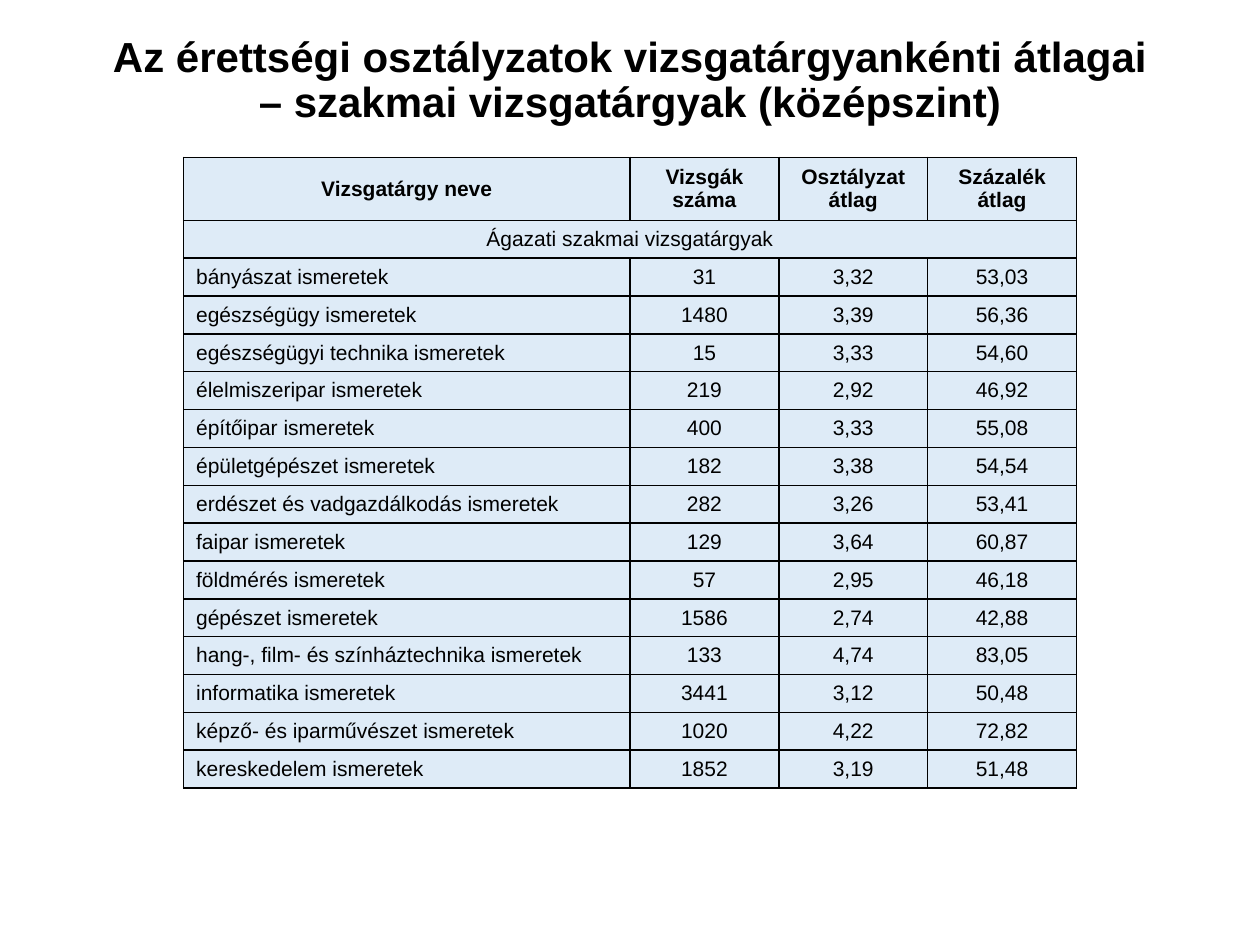
import pptx
import pptx.dml.color
import pptx.enum.text
import pptx.oxml
import pptx.oxml.ns
import pptx.util

Cm = pptx.util.Cm
Align = pptx.enum.text.PP_ALIGN
Anchor = pptx.enum.text.MSO_ANCHOR

TITLE = "Az érettségi osztályzatok vizsgatárgyankénti átlagai – szakmai vizsgatárgyak (középszint)"
HEADINGS = ("Vizsgatárgy neve", "Vizsgák száma", "Osztályzat átlag", "Százalék átlag")
SECTION = "Ágazati szakmai vizsgatárgyak"
SUBJECTS = (
    ("bányászat", "31", "3,32", "53,03"),
    ("egészségügy", "1480", "3,39", "56,36"),
    ("egészségügyi technika", "15", "3,33", "54,60"),
    ("élelmiszeripar", "219", "2,92", "46,92"),
    ("építőipar", "400", "3,33", "55,08"),
    ("épületgépészet", "182", "3,38", "54,54"),
    ("erdészet és vadgazdálkodás", "282", "3,26", "53,41"),
    ("faipar", "129", "3,64", "60,87"),
    ("földmérés", "57", "2,95", "46,18"),
    ("gépészet", "1586", "2,74", "42,88"),
    ("hang-, film- és színháztechnika", "133", "4,74", "83,05"),
    ("informatika", "3441", "3,12", "50,48"),
    ("képző- és iparművészet", "1020", "4,22", "72,82"),
    ("kereskedelem", "1852", "3,19", "51,48"),
)


def colour(hex_code):
    return pptx.dml.color.RGBColor.from_string(hex_code)


def write(frame, text, size=12, bold=False, align=Align.CENTER, spacing=None, ink="000000"):
    paragraph = frame.paragraphs[0]
    paragraph.alignment = align
    paragraph.line_spacing = spacing
    run = paragraph.add_run()
    run.text = text
    run.font.name = "Arial"
    run.font.size = pptx.util.Pt(size)
    run.font.bold = bold
    run.font.color.rgb = colour(ink)


class GradeSlide:
    """Holds the table style and the slide being built."""

    fill = "DEEBF7"
    border = "000000"
    border_width = pptx.util.Pt(1)

    def __init__(self, deck):
        self.slide = deck.slides.add_slide(deck.slide_layouts[6])

    def title(self, text, left, top, width, height):
        frame = self.slide.shapes.add_textbox(Cm(left), Cm(top), Cm(width), Cm(height)).text_frame
        frame.word_wrap = True
        frame.vertical_anchor = Anchor.MIDDLE
        write(frame, text, size=24, bold=True, spacing=0.9)

    def cell(self, cell, text="", **text_format):
        properties = cell._tc.get_or_add_tcPr()
        for side in "LRTB":
            properties.append(pptx.oxml.parse_xml(
                f'<a:ln{side} {pptx.oxml.ns.nsdecls("a")} w="{self.border_width}">'
                f'<a:solidFill><a:srgbClr val="{self.border}"/></a:solidFill></a:ln{side}>'))
        cell.fill.solid()
        cell.fill.fore_color.rgb = colour(self.fill)
        cell.vertical_anchor = Anchor.MIDDLE
        if text:
            write(cell.text_frame, text, **text_format)

    def grades(self, left, top, widths, header_height, row_height):
        rows = [HEADINGS, (SECTION, "", "", "")]
        rows += [(f"{subject} ismeretek", *values) for subject, *values in SUBJECTS]
        heights = [header_height] + [row_height] * (len(rows) - 1)
        table = self.slide.shapes.add_table(
            len(rows), len(widths), Cm(left), Cm(top), Cm(sum(widths)), Cm(sum(heights))).table
        table.horz_banding = False
        for column, width in zip(table.columns, widths):
            column.width = Cm(width)
        for row, height in zip(table.rows, heights):
            row.height = Cm(height)
        table.cell(1, 0).merge(table.cell(1, len(widths) - 1))
        for r, texts in enumerate(rows):
            for c, text in enumerate(texts):
                align = Align.LEFT if r > 1 and c == 0 else Align.CENTER
                self.cell(table.cell(r, c), text, bold=r == 0, align=align)


def main():
    deck = pptx.Presentation()
    deck.slide_width, deck.slide_height = Cm(25.4), Cm(19.05)
    slide = GradeSlide(deck)
    slide.title(TITLE, 1.75, -0.2, 21.9, 3.68)
    slide.grades(3.7, 3.17, (9, 3, 3, 3), header_height=1.04, row_height=0.71)
    deck.save("out.pptx")


if __name__ == "__main__":
    main()
